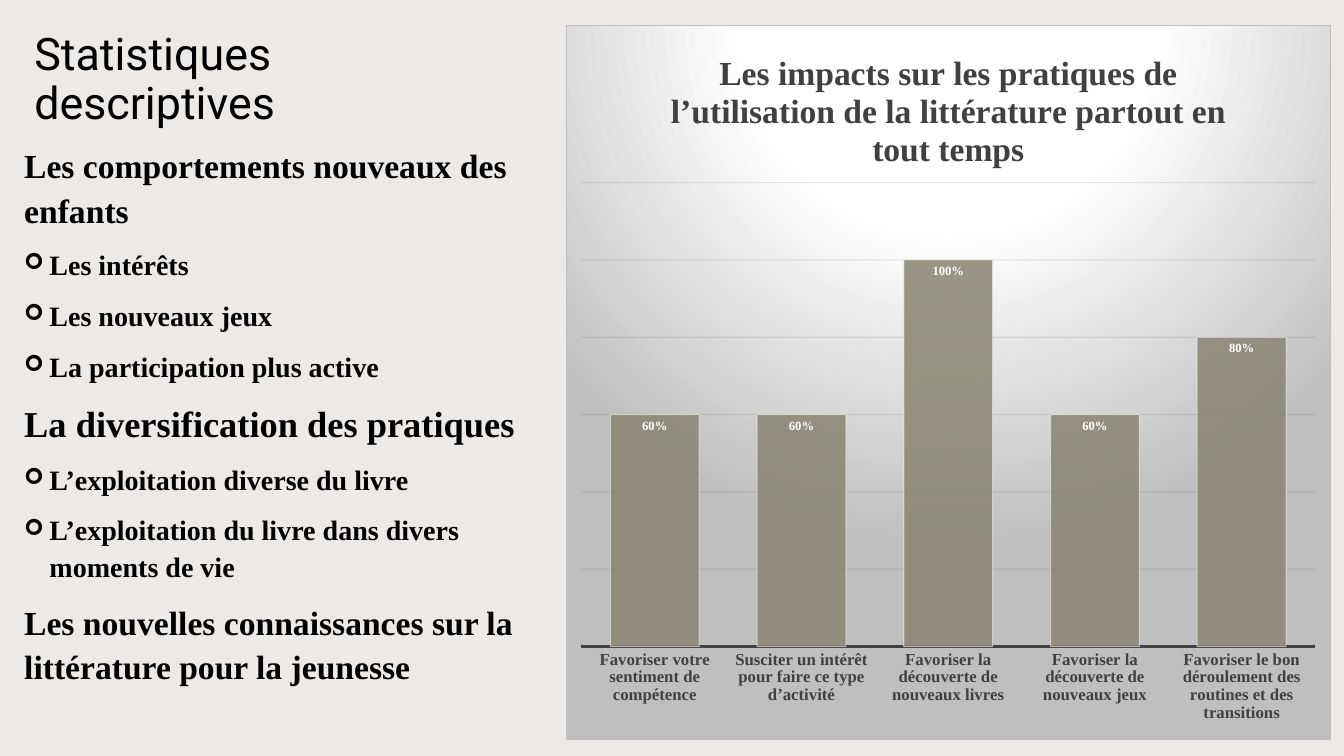
"""Build the slide on descriptive statistics: key findings beside a column chart."""
from lxml.etree import SubElement
from pptx import Presentation
from pptx.chart.data import CategoryChartData
from pptx.dml.color import RGBColor
from pptx.enum.chart import XL_CHART_TYPE, XL_LABEL_POSITION, XL_TICK_LABEL_POSITION, XL_TICK_MARK
from pptx.enum.text import MSO_ANCHOR, MSO_AUTO_SIZE, PP_ALIGN
from pptx.oxml import parse_xml
from pptx.oxml.ns import nsdecls, qn
from pptx.util import Inches, Pt

COLORS = {
    "background": "EDE9E7", "text": "000000", "chart_text": "404040",
    "bar": "898470", "white": "FFFFFF", "grey": "BFBFBF", "grid": "0D0D0D",
}
SERIF = "Times New Roman"


def style_font(font, size, color, name=SERIF, bold=True):
    font.size, font.name, font.bold = Pt(size), name, bold
    font.color.rgb = RGBColor.from_string(COLORS[color])


def paint(fill, color, opacity=100):
    fill.solid()
    fill.fore_color.rgb = RGBColor.from_string(COLORS[color])
    if opacity < 100:
        for srgb in fill._xPr.iter(qn("a:srgbClr")):
            SubElement(srgb, qn("a:alpha"), val=str(opacity * 1000))


presentation = Presentation()
presentation.slide_width, presentation.slide_height = Inches(13.33), Inches(7.5)
slide = presentation.slides.add_slide(presentation.slide_layouts[1])
paint(slide.background.fill, "background")

heading = slide.shapes.title
heading.left, heading.top = Inches(0.24), Inches(0.24)
heading.width, heading.height = Inches(3.98), Inches(1.12)
heading.text_frame.text = "Statistiques descriptives"
heading.text_frame.auto_size = MSO_AUTO_SIZE.NONE
heading.text_frame.vertical_anchor = MSO_ANCHOR.MIDDLE
heading_line = heading.text_frame.paragraphs[0]
heading_line.alignment = PP_ALIGN.LEFT
heading_line.line_spacing = 0.9
style_font(heading_line.runs[0].font, 32, "text", "Roboto", False)

findings = [
    ("Les comportements nouveaux des enfants", 24,
     ["Les intérêts", "Les nouveaux jeux", "La participation plus active"]),
    ("La diversification des pratiques", 26,
     ["L’exploitation diverse du livre", "L’exploitation du livre dans divers moments de vie"]),
    ("Les nouvelles connaissances sur la littérature pour la jeunesse", 24, []),
]
finding_lines = []
for theme, theme_size, details in findings:
    finding_lines.append((theme, theme_size, False))
    finding_lines += [(detail, 20, True) for detail in details]

body = slide.placeholders[1]
body.left, body.top, body.width, body.height = Inches(0.14), Inches(1.35), Inches(5.21), Inches(5.91)
body.text_frame.text = "\n".join(line for line, size, bulleted in finding_lines)
body.text_frame.auto_size = MSO_AUTO_SIZE.NONE
for paragraph, (line, size, bulleted) in zip(body.text_frame.paragraphs, finding_lines):
    paragraph.line_spacing = 1.1
    paragraph.space_before = Pt(10)
    style_font(paragraph.runs[0].font, size, "text")
    properties = paragraph._p.get_or_add_pPr()
    indent = Inches(0.25) if bulleted else 0
    properties.set("marL", str(indent))
    properties.set("indent", str(-indent))
    if bulleted:
        SubElement(properties, qn("a:buSzPct"), val="80000")
        SubElement(properties, qn("a:buFont"), typeface="Wingdings")
        SubElement(properties, qn("a:buChar"), char="➢")
    else:
        SubElement(properties, qn("a:buNone"))

impacts = CategoryChartData(number_format="0%")
impacts.categories = [
    "Favoriser votre sentiment de compétence",
    "Susciter un intérêt pour faire ce type d’activité",
    "Favoriser la découverte de nouveaux livres",
    "Favoriser la découverte de nouveaux jeux",
    "Favoriser le bon déroulement des routines et des transitions",
]
impacts.add_series("Series 1", [0.6, 0.6, 1, 0.6, 0.8])
chart = slide.shapes.add_chart(
    XL_CHART_TYPE.COLUMN_CLUSTERED, Inches(5.61), Inches(0.25), Inches(7.59), Inches(7.09), impacts
).chart
style_font(chart.font, 10, "text", bold=False)
chart.has_legend = False
chart.has_title = True
chart.chart_title.include_in_layout = False
chart_heading = chart.chart_title.text_frame
chart_heading.text = "Les impacts sur les pratiques de l’utilisation de la littérature partout en tout temps"
style_font(chart_heading.paragraphs[0].runs[0].font, 24, "chart_text")

categories = chart.category_axis
categories.major_tick_mark = XL_TICK_MARK.NONE
style_font(categories.tick_labels.font, 12, "chart_text")
paint(categories.format.line.fill, "chart_text")
categories.format.line.width = Pt(1.5)

percentages = chart.value_axis
percentages.minimum_scale, percentages.maximum_scale, percentages.major_unit = 0, 1.2, 0.2
percentages.tick_label_position = XL_TICK_LABEL_POSITION.NONE
percentages.visible = False
percentages.has_major_gridlines = True
gridlines = percentages.major_gridlines.format.line
paint(gridlines.fill, "grid", 10)
gridlines.width = Pt(0.75)

plot = chart.plots[0]
plot.gap_width = 65
plot.vary_by_categories = False
bars = plot.series[0]
paint(bars.format.fill, "bar", 85)
paint(bars.format.line.fill, "white", 50)
bars.format.line.width = Pt(0.75)
labels = bars.data_labels
labels.show_value = True
labels.number_format, labels.number_format_is_linked = "0%", False
labels.position = XL_LABEL_POSITION.INSIDE_END
style_font(labels.font, 9, "white")

plot_area = chart._chartSpace.chart.plotArea
for automatic_layout in plot_area.findall(qn("c:layout")):
    plot_area.remove(automatic_layout)
plot_layout = parse_xml(f"<c:layout {nsdecls('c')}><c:manualLayout/></c:layout>")
for tag, value in [("layoutTarget", "inner"), ("xMode", "edge"), ("yMode", "edge"),
                   ("x", 0.02), ("y", 0.22), ("w", 0.96), ("h", 0.65)]:
    SubElement(plot_layout[0], qn(f"c:{tag}"), val=str(value))
plot_area.insert(0, plot_layout)

stops = "".join(
    f'<a:gs pos="{position * 1000}"><a:srgbClr val="{COLORS[color]}"/></a:gs>'
    for position, color in [(0, "white"), (39, "white"), (100, "grey")]
)
chart._chartSpace.chart.addnext(parse_xml(
    f'<c:spPr {nsdecls("c", "a")}><a:gradFill><a:gsLst>{stops}</a:gsLst>'
    '<a:path path="circle"><a:fillToRect l="50000" t="-80000" r="50000" b="180000"/></a:path>'
    f'</a:gradFill><a:ln w="{Pt(0.75)}"><a:solidFill><a:srgbClr val="{COLORS["grey"]}"/>'
    '</a:solidFill></a:ln></c:spPr>'
))

presentation.save("out.pptx")
